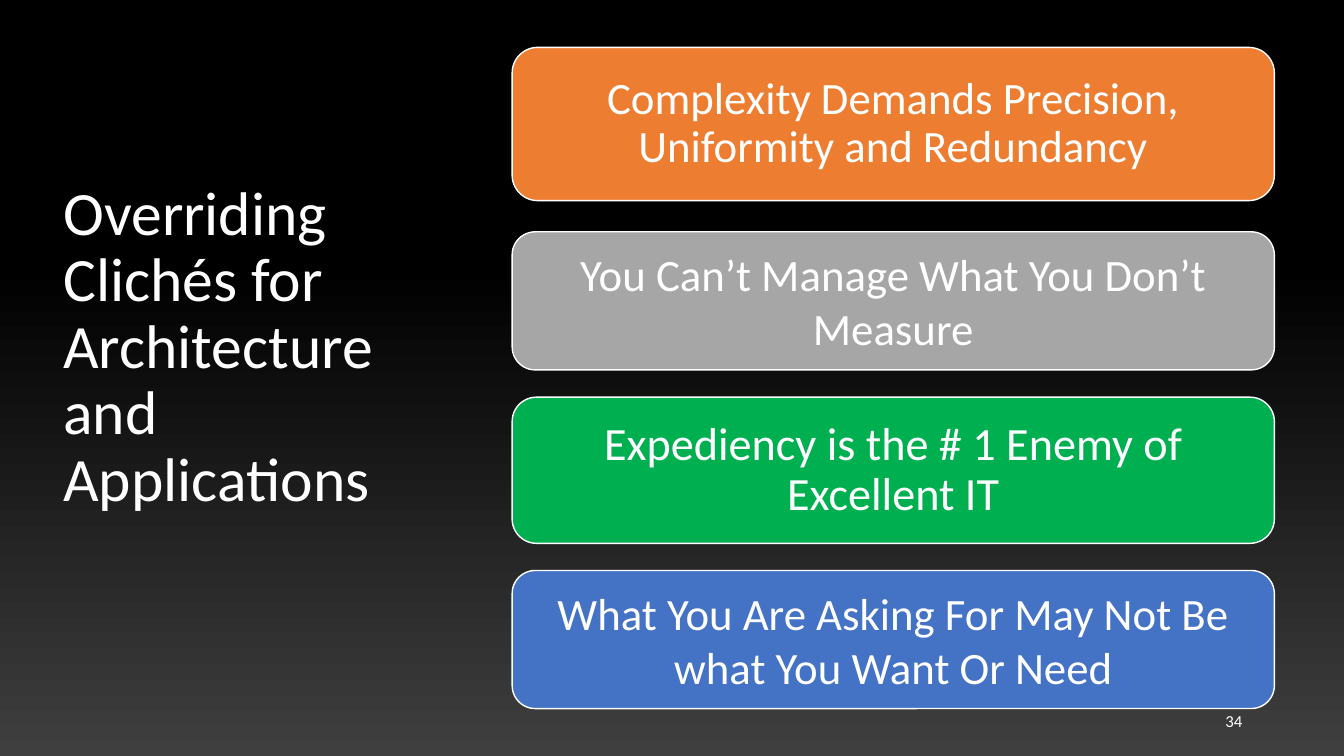
from dataclasses import dataclass

from pptx import Presentation
from pptx.dml.color import RGBColor
from pptx.enum.shapes import MSO_SHAPE
from pptx.enum.text import MSO_ANCHOR, PP_ALIGN
from pptx.util import Inches, Pt

ROUNDED = MSO_SHAPE.ROUNDED_RECTANGLE
MIDDLE = MSO_ANCHOR.MIDDLE
LEFT, CENTER, RIGHT = PP_ALIGN.LEFT, PP_ALIGN.CENTER, PP_ALIGN.RIGHT


@dataclass(frozen=True)
class Theme:
    font: str = "Calibri"
    white: str = "FFFFFF"
    black: str = "000000"
    charcoal: str = "3F3F3F"
    orange: str = "ED7D31"
    gray: str = "A6A6A6"
    green: str = "00B050"
    blue: str = "4472C4"
    title_size: int = 44
    card_size: int = 32
    large_card_size: int = 33
    number_size: int = 12


class SlideBuilder:
    def __init__(self, page, theme):
        self.page = page
        self.theme = theme

    def background(self):
        """Fade from charcoal at the bottom edge to black at 65% of the height."""
        fill = self.page.background.fill
        fill.gradient()
        fill.gradient_angle = 90
        colors = (self.theme.charcoal, self.theme.black)
        for stop, color, position in zip(fill.gradient_stops, colors, (0, 0.65)):
            stop.color.rgb = RGBColor.from_string(color)
            stop.position = position

    def set_text(self, box, text, size, align, line_spacing):
        frame = box.text_frame
        frame.word_wrap = True
        frame.vertical_anchor = MIDDLE
        para = frame.paragraphs[0]
        para.text = text
        para.alignment = align
        para.line_spacing = line_spacing
        para.font.name = self.theme.font
        para.font.size = Pt(size)
        para.font.color.rgb = RGBColor.from_string(self.theme.white)

    def label(self, left, top, width, height, text, size, align=LEFT, line_spacing=1.0):
        box = self.page.shapes.add_textbox(
            Inches(left), Inches(top), Inches(width), Inches(height))
        self.set_text(box, text, size, align, line_spacing)

    def card(self, top, height, color, text, size, line_spacing, inset):
        box = self.page.shapes.add_shape(
            ROUNDED, Inches(5.08), Inches(top), Inches(7.56), Inches(height))
        box.shadow.inherit = False
        box.fill.solid()
        box.fill.fore_color.rgb = RGBColor.from_string(color)
        box.line.color.rgb = RGBColor.from_string(self.theme.white)
        box.line.width = Pt(1)
        frame = box.text_frame
        frame.margin_left = frame.margin_right = Inches(inset)
        self.set_text(box, text, size, CENTER, line_spacing)


def main():
    theme = Theme()
    deck = Presentation()
    deck.slide_width, deck.slide_height = Inches(13.33), Inches(7.5)
    slide = SlideBuilder(deck.slides.add_slide(deck.slide_layouts[6]), theme)

    slide.background()
    slide.label(0.53, 0.69, 3.86, 5.53,
                "Overriding Clichés for Architecture and Applications",
                theme.title_size, line_spacing=0.9)

    cards = [
        (0.47, 1.52, theme.orange,
         "Complexity Demands Precision, Uniformity and Redundancy",
         theme.card_size, 0.9, 0.13),
        (2.3, 1.37, theme.gray, "You Can’t Manage What You Don’t Measure",
         theme.card_size, 1.0, 0.1),
        (3.94, 1.45, theme.green, "Expediency is the # 1 Enemy of Excellent IT",
         theme.large_card_size, 0.9, 0.14),
        (5.66, 1.37, theme.blue,
         "What You Are Asking For May Not Be what You Want Or Need",
         theme.card_size, 1.0, 0.1),
    ]
    for card in cards:
        slide.card(*card)

    slide.label(9.42, 6.95, 3, 0.4, "34", theme.number_size, RIGHT)
    deck.save("out.pptx")


if __name__ == "__main__":
    main()
